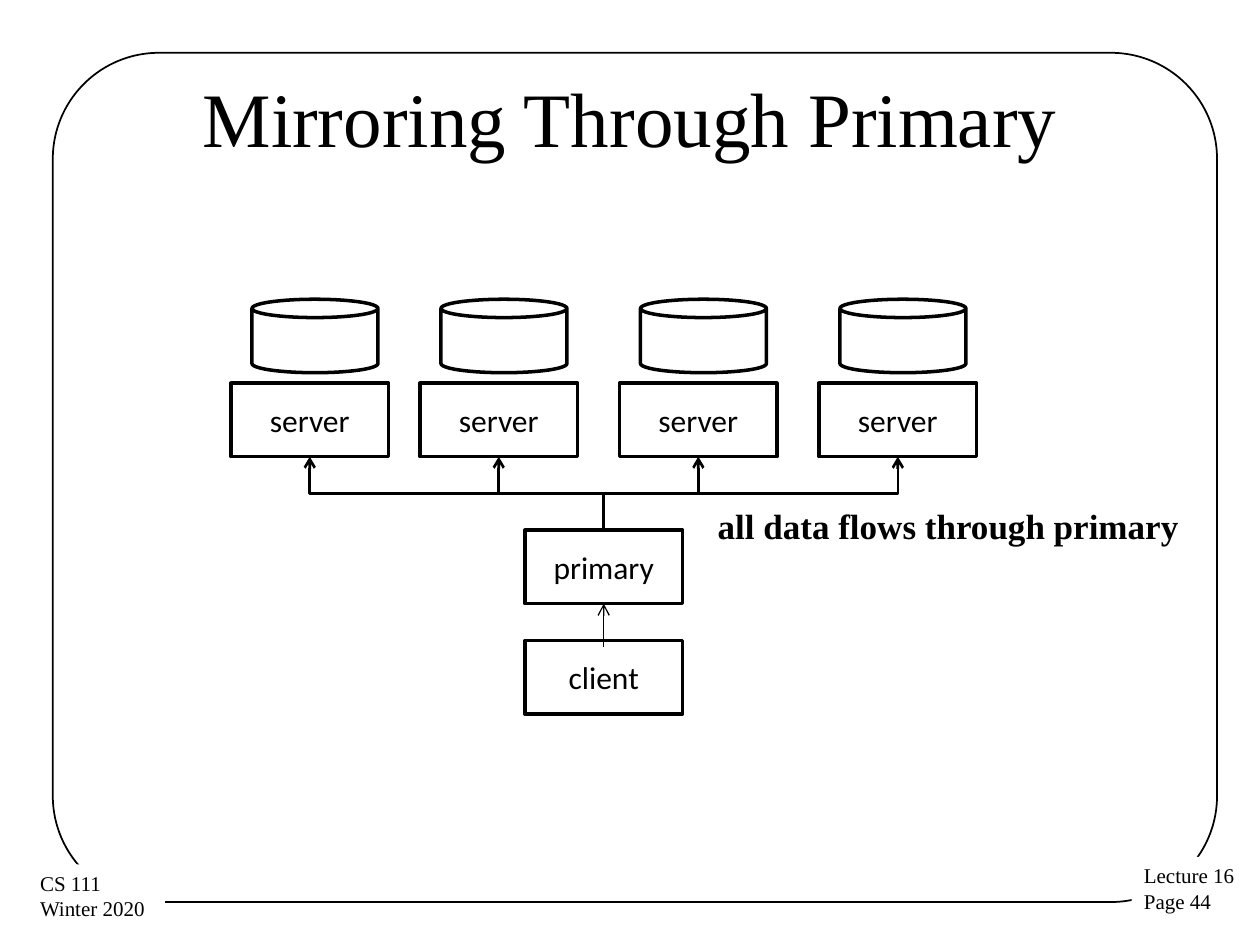
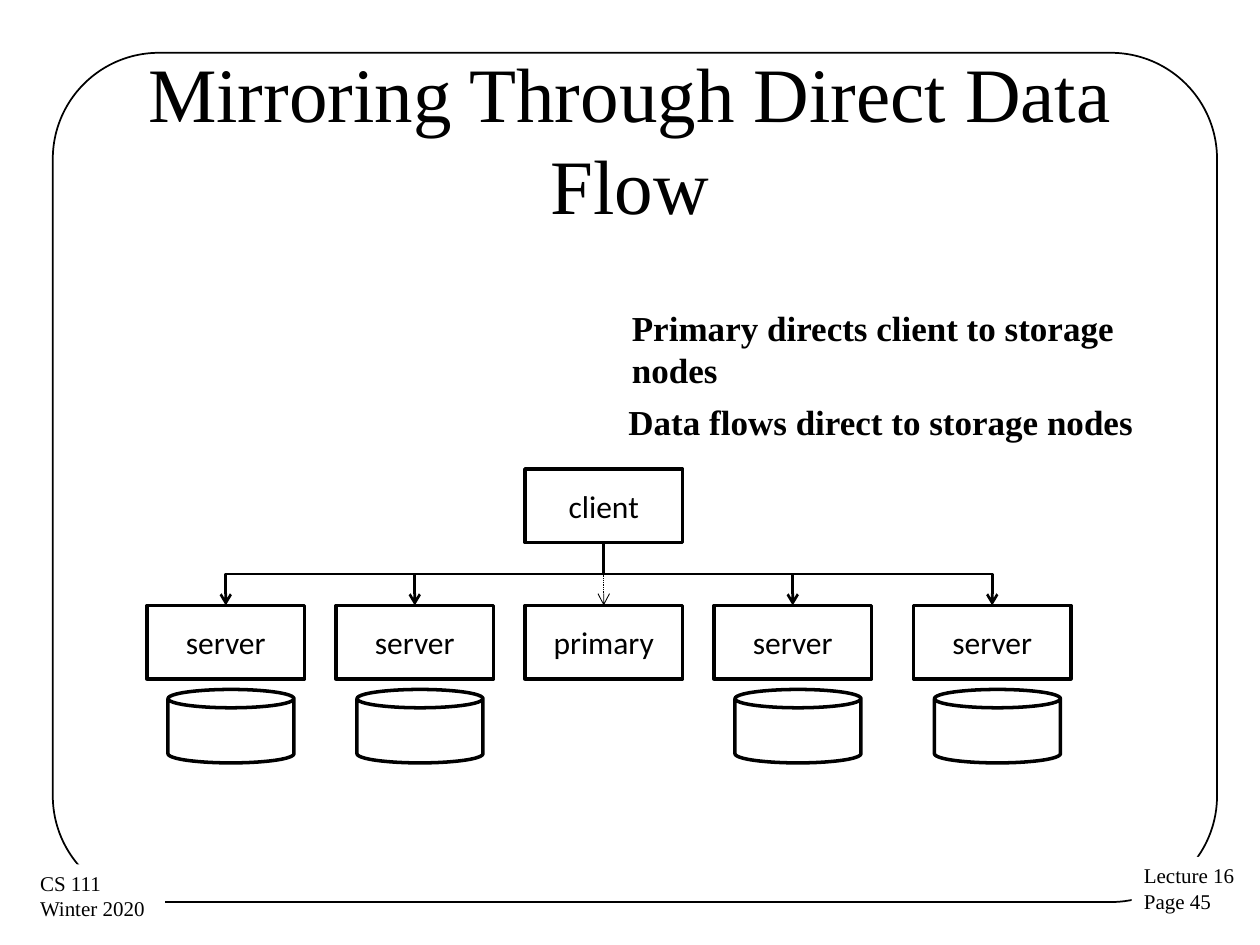
"""Builds two slides that compare ways of mirroring data to storage servers."""
import dataclasses

import pptx
import pptx.dml.color
import pptx.enum.dml
import pptx.enum.shapes
import pptx.enum.text
import pptx.oxml.ns
import pptx.util
from lxml import etree

Pt = pptx.util.Pt
SHAPES = pptx.enum.shapes.MSO_SHAPE
CONNECTORS = pptx.enum.shapes.MSO_CONNECTOR
ALIGN = pptx.enum.text.PP_ALIGN
ANCHOR = pptx.enum.text.MSO_ANCHOR
AUTO_SIZE = pptx.enum.text.MSO_AUTO_SIZE
qn = pptx.oxml.ns.qn
TOP, BOTTOM = 0, 2

SLIDES = [
    {
        "title": "Mirroring Through Primary", "title_top": 21.6, "page": 44,
        "hub": "primary",
        "boxes": {"primary": (300, 303), "client": (300, 366)},
        "servers": {"lefts": (132, 240, 354, 468), "top": 219, "above_hub": True},
        "link": {"target": "primary", "side": BOTTOM, "start": (345, 370), "width": 0.75},
        "captions": [("all data flows through primary", 403, 285, 32)],
    },
    {
        "title": "Mirroring Through Direct Data Flow", "title_top": 33.8, "page": 45,
        "hub": "client",
        "boxes": {"client": (300, 268), "primary": (300, 346)},
        "servers": {"lefts": (84, 192, 408, 522), "top": 346, "above_hub": False},
        "link": {"source": "client", "target": "primary", "side": TOP,
                 "start": (345, 310), "width": 0.5,
                 "dash": pptx.enum.dml.MSO_LINE.ROUND_DOT},
        "captions": [("Data flows direct to storage nodes", 352, 225.4, 32),
                     ("Primary directs client to storage nodes", 354, 171.4, 55.4)],
    },
]
FOOTERS = [(("Lecture 16", "Page {page}"), (646.6, 489.6, 67, 36.7)),
           (("CS 111", "Winter 2020"), (15.8, 493.9, 78.5, 36.7))]
FRAME = (30.2, 30.2, 665.3, 485.3)
BOX_WIDTH, BOX_HEIGHT = 90, 42
DISK_WIDTH, DISK_INDENT, DISK_STEP = 72, 12, 48


@dataclasses.dataclass(frozen=True)
class Theme:
    """Holds the colours, fonts, type sizes and line widths."""
    ink: str = "000000"
    paper: str = "FFFFFF"
    serif: str = "Times New Roman"
    sans: str = "Calibri"
    title: int = 44
    caption: int = 20
    label: int = 18
    footer: int = 12
    frame_line: float = 1
    box_line: float = 2
    flow_line: float = 1.5


THEME = Theme()


def colour(value):
    """Returns a colour object for a hex value."""
    return pptx.dml.color.RGBColor.from_string(value)


def assign(target, values):
    """Sets each named value on the target."""
    for name, value in values.items():
        setattr(target, name, value)


def write(holder, lines, size, font=THEME.serif, bold=False, align=ALIGN.LEFT, **frame_format):
    """Writes one paragraph per line in a shape."""
    frame = holder.text_frame
    assign(frame, {"word_wrap": True, **frame_format})
    frame.text = "\n".join(lines)
    for paragraph in frame.paragraphs:
        paragraph.alignment = align
        assign(paragraph.font, {"name": font, "size": Pt(size), "bold": bold})
        paragraph.font.color.rgb = colour(THEME.ink)


def add_outline(slide, preset, place, line_width=None, fill=None):
    """Adds a flat preset shape with an optional line and fill."""
    outline = slide.shapes.add_shape(preset, *map(Pt, place))
    outline.shadow.inherit = False
    if fill:
        outline.fill.solid()
        outline.fill.fore_color.rgb = colour(fill)
    else:
        outline.fill.background()
    if line_width:
        outline.line.width = Pt(line_width)
        outline.line.color.rgb = colour(THEME.ink)
    else:
        outline.line.fill.background()
    return outline


def add_box(slide, label, left, top):
    """Adds a labelled machine box."""
    box = add_outline(slide, SHAPES.RECTANGLE, (left, top, BOX_WIDTH, BOX_HEIGHT), THEME.box_line)
    write(box, [label], THEME.label, THEME.sans, align=ALIGN.CENTER,
          vertical_anchor=ANCHOR.MIDDLE)
    return box


def add_arrow(slide, kind, start, end, width, dash=None):
    """Adds an open-headed arrow without a shadow."""
    arrow = slide.shapes.add_connector(kind, *start, *end)
    arrow.line.width = Pt(width)
    arrow.line.color.rgb = colour(THEME.ink)
    if dash:
        arrow.line.dash_style = dash
    etree.SubElement(arrow.line._get_or_add_ln(), qn("a:tailEnd"), type="arrow")
    etree.SubElement(arrow._element.spPr, qn("a:effectLst"))
    return arrow


def add_flow(slide, hub, server, upward):
    """Adds an elbow arrow that leaves the hub vertically and enters a server."""
    start = hub.left + hub.width // 2, hub.top if upward else hub.top + hub.height
    end = server.left + server.width // 2, server.top + server.height if upward else server.top
    flow = add_arrow(slide, CONNECTORS.ELBOW, start, end, THEME.flow_line)
    flow.begin_connect(hub, TOP if upward else BOTTOM)
    flow.end_connect(server, BOTTOM if upward else TOP)
    rightward = end[0] > start[0]
    run, rise = abs(end[0] - start[0]), abs(end[1] - start[1])
    assign(flow, {"left": (start[0] + end[0] - rise) // 2, "top": (start[1] + end[1] - run) // 2,
                  "width": rise, "height": run})
    turn = {"rot": (90 if rightward == upward else 270) * 60000,
            "flipH": int(rightward), "flipV": int(upward)}
    for name, value in turn.items():
        flow._element.spPr.find(qn("a:xfrm")).set(name, str(value))


def add_base(deck, content):
    """Adds a slide with its title, frame and footers."""
    slide = deck.slides.add_slide(deck.slide_layouts[5])
    title = slide.shapes.title
    assign(title, {"left": Pt(36), "top": Pt(content["title_top"]),
                   "width": Pt(648), "height": Pt(90)})
    write(title, [content["title"]], THEME.title, align=ALIGN.CENTER,
          vertical_anchor=ANCHOR.MIDDLE, auto_size=AUTO_SIZE.NONE)
    frame = add_outline(slide, SHAPES.ROUNDED_RECTANGLE, FRAME, THEME.frame_line)
    frame.adjustments[0] = 0.125
    for lines, place in FOOTERS:
        footer = add_outline(slide, SHAPES.RECTANGLE, place, fill=THEME.paper)
        write(footer, [line.format(page=content["page"]) for line in lines], THEME.footer,
              word_wrap=False, vertical_anchor=ANCHOR.TOP,
              auto_size=AUTO_SIZE.SHAPE_TO_FIT_TEXT)
    return slide


def add_diagram(slide, content):
    """Adds the machines, disks, arrows and captions."""
    boxes = {label: add_box(slide, label, *place) for label, place in content["boxes"].items()}
    group = content["servers"]
    upward, top = group["above_hub"], group["top"]
    disk_top = top - DISK_STEP if upward else top + DISK_STEP
    for left in group["lefts"]:
        server = add_box(slide, "server", left, top)
        add_outline(slide, SHAPES.CAN, (left + DISK_INDENT, disk_top, DISK_WIDTH, BOX_HEIGHT),
                    THEME.box_line)
        add_flow(slide, boxes[content["hub"]], server, upward)
    link = content["link"]
    start = tuple(map(Pt, link["start"]))
    arrow = add_arrow(slide, CONNECTORS.STRAIGHT, start, start, link["width"], link.get("dash"))
    if "source" in link:
        arrow.begin_connect(boxes[link["source"]], BOTTOM)
    arrow.end_connect(boxes[link["target"]], link["side"])
    for text, left, caption_top, height in content["captions"]:
        caption = slide.shapes.add_textbox(Pt(left), Pt(caption_top), Pt(312), Pt(height))
        write(caption, [text], THEME.caption, bold=True, auto_size=AUTO_SIZE.SHAPE_TO_FIT_TEXT)


def main():
    """Builds and saves the deck."""
    deck = pptx.Presentation()
    assign(deck, {"slide_width": Pt(720), "slide_height": Pt(540)})
    for content in SLIDES:
        add_diagram(add_base(deck, content), content)
    deck.save("out.pptx")


if __name__ == "__main__":
    main()
